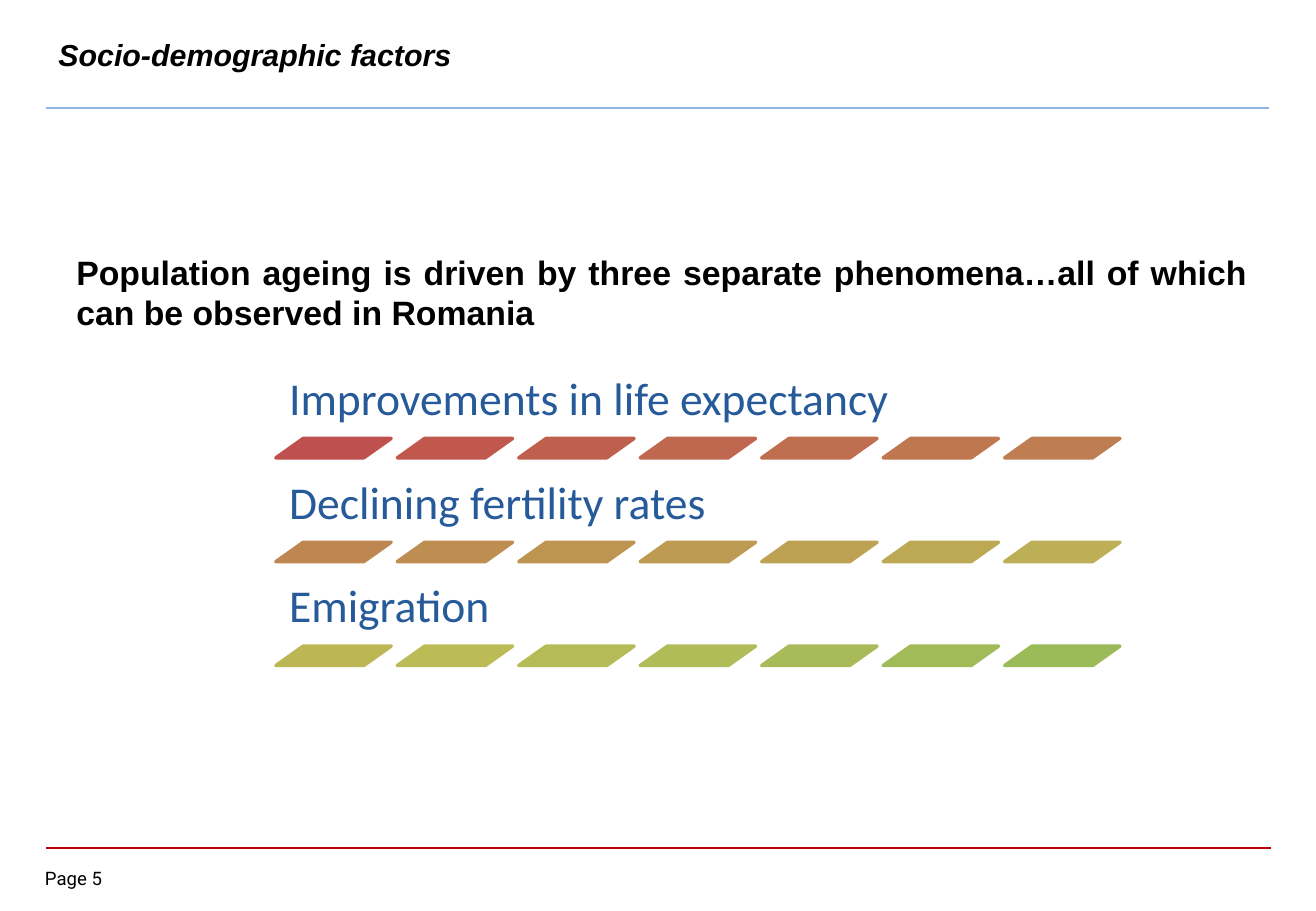
from colorsys import hls_to_rgb, rgb_to_hls
from dataclasses import dataclass

from lxml import etree
from pptx import Presentation
from pptx.dml.color import RGBColor
from pptx.enum.shapes import MSO_CONNECTOR, MSO_SHAPE
from pptx.enum.text import MSO_ANCHOR, PP_ALIGN
from pptx.oxml.ns import qn
from pptx.util import Inches, Pt

STRAIGHT = MSO_CONNECTOR.STRAIGHT
PARALLELOGRAM = MSO_SHAPE.PARALLELOGRAM
TOP, MIDDLE, BOTTOM = MSO_ANCHOR.TOP, MSO_ANCHOR.MIDDLE, MSO_ANCHOR.BOTTOM
LEFT, JUSTIFY = PP_ALIGN.LEFT, PP_ALIGN.JUSTIFY


@dataclass(frozen=True)
class Theme:
    text: str = "000000"
    factor: str = "265A99"
    header_rule: str = "8EB4E3"
    footer_rule: str = "C00000"
    band_start: str = "C0504D"
    band_end: str = "9BBB59"
    heading_font: str = "Arial"
    factor_font: str = "Calibri"
    footer_font: str = "Roboto"
    title_size: int = 18
    statement_size: int = 20
    factor_size: int = 27
    footer_size: int = 11


def blend(start, end, share):
    """Mix two hex colours along hue, lightness and saturation."""
    first, last = (rgb_to_hls(*(c / 255 for c in RGBColor.from_string(h)))
                   for h in (start, end))
    mixed = hls_to_rgb(*(a + (b - a) * share for a, b in zip(first, last)))
    return "".join(f"{round(c * 255):02X}" for c in mixed)


class SlideBuilder:
    """Places elements by percentages of the slide's width and height."""

    def __init__(self, deck, theme):
        self.deck = deck
        self.theme = theme
        self.slide = deck.slides.add_slide(deck.slide_layouts[5])

    def box(self, left, top, width, height):
        across, down = self.deck.slide_width / 100, self.deck.slide_height / 100
        return (round(left * across), round(top * down),
                round(width * across), round(height * down))

    def set_text(self, shape, text, font, size, color, bold=False, italic=False,
                 align=LEFT, anchor=TOP, insets=(0.1, 0.05), spacing=None):
        frame = shape.text_frame
        frame.text = text
        frame.word_wrap = True
        frame.vertical_anchor = anchor
        frame.margin_left = frame.margin_right = Inches(insets[0])
        frame.margin_top = frame.margin_bottom = Inches(insets[1])
        paragraph = frame.paragraphs[0]
        paragraph.alignment = align
        paragraph.line_spacing = spacing
        style = paragraph.runs[0].font
        style.name, style.size = font, Pt(size)
        style.bold, style.italic = bold, italic
        style.color.rgb = RGBColor.from_string(color)

    def title(self, area, text, **options):
        heading = self.slide.shapes.title
        heading.left, heading.top, heading.width, heading.height = self.box(*area)
        self.set_text(heading, text, **options)

    def text(self, area, text, **options):
        self.set_text(self.slide.shapes.add_textbox(*self.box(*area)), text,
                      **options)

    def rule(self, left, right, top, color, weight):
        x, y, width, _ = self.box(left, top, right - left, 0)
        line = self.slide.shapes.add_connector(STRAIGHT, x, y, x + width, y)
        line.line.color.rgb = RGBColor.from_string(color)
        line.line.width = Pt(weight)
        etree.SubElement(line._element.spPr, qn("a:effectLst"))

    def tile(self, area, color):
        tile = self.slide.shapes.add_shape(PARALLELOGRAM, *self.box(*area))
        tile.adjustments[0] = 1.408
        tile.shadow.inherit = False
        tile.fill.solid()
        tile.fill.fore_color.rgb = RGBColor.from_string(color)
        tile.line.color.rgb = RGBColor.from_string(color)
        tile.line.width = Pt(2)


def main():
    deck = Presentation()
    deck.slide_width, deck.slide_height = Inches(10.83), Inches(7.5)
    theme = Theme()
    page = SlideBuilder(deck, theme)

    # Header and footer
    page.title((3.51, 2.8, 69.07, 6.27), "Socio-demographic factors",
               font=theme.heading_font, size=theme.title_size, color=theme.text,
               bold=True, italic=True, anchor=MIDDLE)
    page.rule(3.51, 96.4, 11.87, theme.header_rule, 1.5)
    page.rule(3.51, 96.58, 93.07, theme.footer_rule, 1)
    page.text((3.42, 95.2, 6.74, 2.93), "Page 5", font=theme.footer_font,
              size=theme.footer_size, color=theme.text, insets=(0, 0))

    # Key statement
    page.text((4.89, 26.93, 90.86, 10.27),
              "Population ageing is driven by three separate phenomena…"
              "all of which can be observed in Romania",
              font=theme.heading_font, size=theme.statement_size,
              color=theme.text, bold=True, align=JUSTIFY)

    # Factors, each underlined by a band of tiles in one running gradient
    factors = ("Improvements in life expectancy", "Declining fertility rates",
               "Emigration")
    tiles = 7
    last_step = len(factors) * tiles - 1
    left, top, column, row = 20.96, 39.6, 9.23, 11.4
    for band, factor in enumerate(factors):
        band_top = top + band * row
        page.text((left, band_top, 65.47, 8.53), factor,
                  font=theme.factor_font, size=theme.factor_size,
                  color=theme.factor, anchor=BOTTOM, insets=(0.11, 0.11),
                  spacing=0.9)
        for position in range(tiles):
            share = (band * tiles + position) / last_step
            page.tile((left + position * column, band_top + 8.53, 8.77, 2.13),
                      blend(theme.band_start, theme.band_end, share))

    deck.save("out.pptx")


if __name__ == "__main__":
    main()
